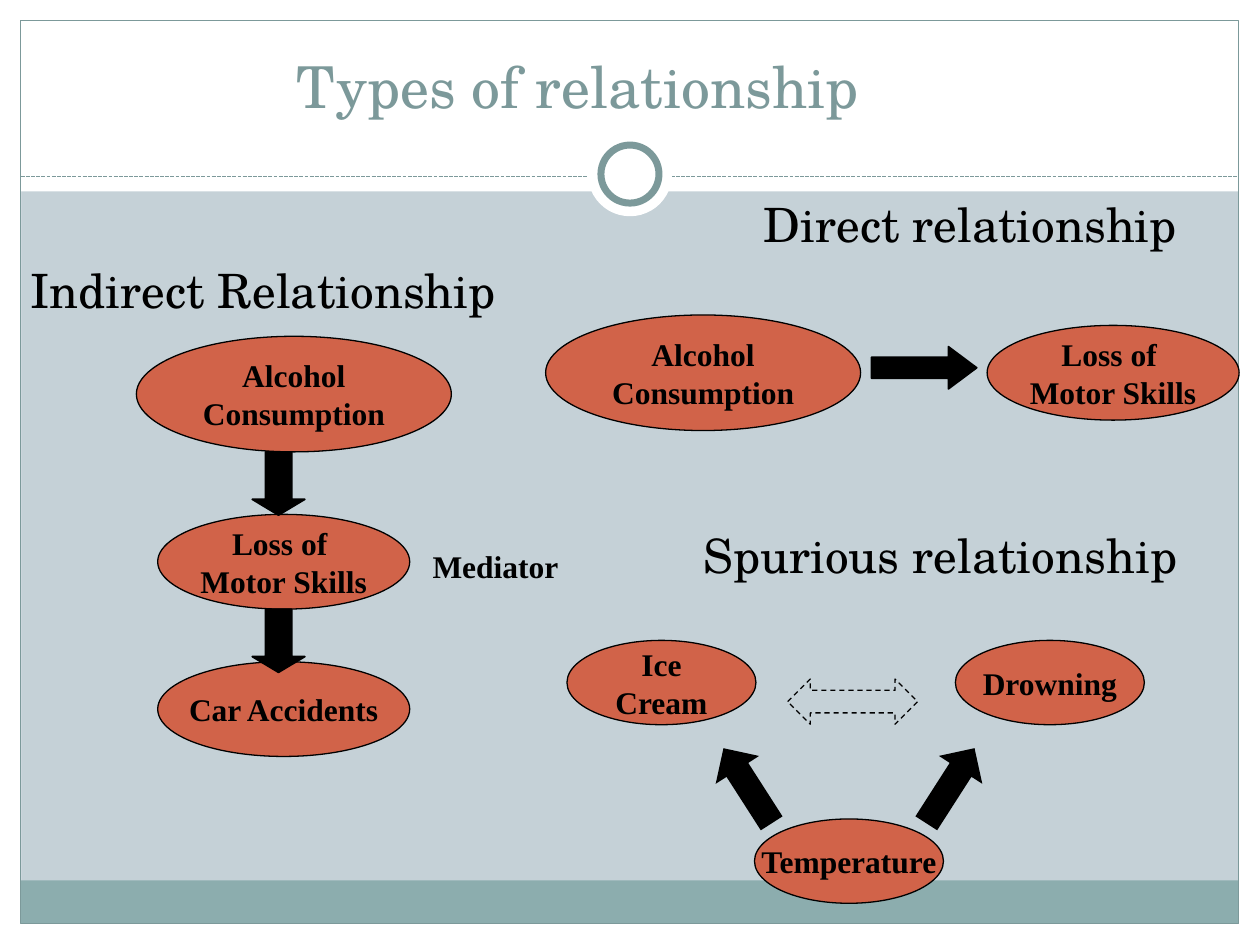
from dataclasses import dataclass

from lxml import etree
from pptx import Presentation
from pptx.dml.color import RGBColor
from pptx.enum.dml import MSO_LINE
from pptx.enum.shapes import MSO_CONNECTOR, MSO_SHAPE
from pptx.enum.text import MSO_ANCHOR, MSO_AUTO_SIZE, PP_ALIGN
from pptx.oxml.ns import qn
from pptx.util import Cm, Pt

RECTANGLE, OVAL = MSO_SHAPE.RECTANGLE, MSO_SHAPE.OVAL
RIGHT_ARROW, DOUBLE_ARROW = MSO_SHAPE.RIGHT_ARROW, MSO_SHAPE.LEFT_RIGHT_ARROW
DASH, FINE_DASH = MSO_LINE.DASH, MSO_LINE.SQUARE_DOT
LEFT, CENTER, RIGHT = PP_ALIGN.LEFT, PP_ALIGN.CENTER, PP_ALIGN.RIGHT
MIDDLE, BOTTOM = MSO_ANCHOR.MIDDLE, MSO_ANCHOR.BOTTOM
FIXED_SIZE = MSO_AUTO_SIZE.NONE


@dataclass(frozen=True)
class Theme:
    background: str = "C5D1D7"
    white: str = "FFFFFF"
    accent: str = "7C999A"
    footer: str = "8CADAE"
    node: str = "D16349"
    black: str = "000000"
    heading_font: str = "TeX Gyre Schola"
    label_font: str = "Times New Roman"
    title_size: int = 33
    heading_size: int = 27
    label_size: int = 18
    thin: float = 0.75
    ring: float = 4


class SlideBuilder:
    def __init__(self, page, theme):
        self.page, self.theme = page, theme
        page.background.fill.solid()
        page.background.fill.fore_color.rgb = RGBColor.from_string(theme.background)

    def format_text(self, para, font, size, color, bold=False, align=CENTER):
        para.alignment = align
        for span in para.runs:
            span.font.name, span.font.size, span.font.bold = font, Pt(size), bold
            span.font.color.rgb = RGBColor.from_string(color)

    def format_label(self, frame, align=CENTER):
        for para in frame.paragraphs:
            self.format_text(para, self.theme.label_font, self.theme.label_size,
                             self.theme.black, True, align)

    def shape(self, kind, left, top, width, height, fill=None, line=None,
              weight=None, dash=None):
        shape = self.page.shapes.add_shape(
            kind, Cm(left), Cm(top), Cm(width), Cm(height))
        shape.shadow.inherit = False
        if fill:
            shape.fill.solid()
            shape.fill.fore_color.rgb = RGBColor.from_string(fill)
        else:
            shape.fill.background()
        if line:
            shape.line.color.rgb = RGBColor.from_string(line)
            shape.line.width = Pt(weight or self.theme.thin)
            if dash:
                shape.line.dash_style = dash
        else:
            shape.line.fill.background()
        return shape

    def circle(self, center_x, center_y, size, **style):
        return self.shape(OVAL, center_x - size / 2, center_y - size / 2,
                          size, size, **style)

    def dashed_line(self, left, right, y):
        line = self.page.shapes.add_connector(
            MSO_CONNECTOR.STRAIGHT, Cm(left), Cm(y), Cm(right), Cm(y))
        line.line.color.rgb = RGBColor.from_string(self.theme.accent)
        line.line.width = Pt(self.theme.thin)
        line.line.dash_style = FINE_DASH
        etree.SubElement(line.element.spPr, qn("a:effectLst"))

    def node(self, text, left, top, width, height, wrap=False):
        oval = self.shape(OVAL, left, top, width, height,
                          self.theme.node, self.theme.black)
        frame = oval.text_frame
        frame.text = text
        frame.word_wrap = wrap
        frame.vertical_anchor = MIDDLE
        self.format_label(frame)
        return oval

    def arrow(self, left, top, width, height, rotation=0, head=0.5, line=None):
        """Draw a black block arrow; head is its length relative to its height."""
        arrow = self.shape(RIGHT_ARROW, left, top, width, height,
                           self.theme.black, line, 1)
        arrow.adjustments[1] = head
        arrow.rotation = rotation
        return arrow

    def caption(self, text, left, top, width, height):
        box = self.page.shapes.add_textbox(Cm(left), Cm(top), Cm(width), Cm(height))
        box.text_frame.text = text
        box.text_frame.word_wrap = True
        self.format_label(box.text_frame, LEFT)

    def group(self, *shapes):
        self.page.shapes.add_group_shape(shapes)

    def place(self, holder, left, top, width, height):
        """Move a placeholder, in front of everything drawn so far."""
        holder.left, holder.top = Cm(left), Cm(top)
        holder.width, holder.height = Cm(width), Cm(height)
        holder.element.getparent().append(holder.element)
        holder.text_frame.auto_size = FIXED_SIZE
        return holder.text_frame

    def title(self, text, *position):
        frame = self.place(self.page.shapes.title, *position)
        frame.text = text
        frame.vertical_anchor = BOTTOM
        self.format_text(frame.paragraphs[0], self.theme.heading_font,
                         self.theme.title_size, self.theme.accent)

    def headings(self, items, *position):
        """Fill the body with (text, alignment, space before) headings."""
        frame = self.place(self.page.placeholders[1], *position)
        frame.text = "\n".join(text for text, _, _ in items)
        for para, (_, align, gap) in zip(frame.paragraphs, items):
            properties = para._p.get_or_add_pPr()
            properties.set("marL", "0")
            properties.set("indent", "0")
            etree.SubElement(properties, qn("a:buNone"))
            para.space_before = Pt(gap)
            self.format_text(para, self.theme.heading_font,
                             self.theme.heading_size, self.theme.black, align=align)


def draw_backdrop(slide):
    theme = slide.theme
    for edge in ((0, 18.62, 25.4, 0.43), (0, 0, 25.4, 3.86),
                 (0, 0, 0.43, 19.05), (24.97, 0, 0.43, 19.05)):
        slide.shape(RECTANGLE, *edge, fill=theme.white)
    slide.shape(RECTANGLE, 0.42, 17.75, 24.55, 0.87, fill=theme.footer)
    slide.shape(RECTANGLE, 0.42, 0.42, 24.55, 18.2, line=theme.accent)
    slide.dashed_line(0.42, 24.97, 3.56)
    slide.circle(12.7, 3.51, 1.7, fill=theme.white)
    slide.circle(12.7, 3.51, 1.17, fill=theme.white, line=theme.accent,
                 weight=theme.ring)


def draw_relationships(slide):
    black = slide.theme.black
    alcohol, skills = "Alcohol Consumption", "Loss of \nMotor Skills"
    large, medium, small = (6.35, 2.33), (5.08, 1.91), (3.81, 1.7)

    slide.group(
        slide.node("Temperature", 15.21, 16.51, *small),
        slide.arrow(18.26, 15.32, 1.8, 1.04, rotation=302.7),
        slide.arrow(14.17, 15.32, 1.8, 1.04, rotation=237.3),
        slide.shape(DOUBLE_ARROW, 15.88, 13.69, 2.62, 0.91, line=black, dash=DASH),
        slide.node("Ice Cream", 11.43, 12.91, *small, wrap=True),
        slide.node("Drowning", 19.26, 12.91, *small))

    slide.node(alcohol, 11, 6.35, *large, wrap=True)
    slide.node(skills, 19.9, 6.56, *medium)
    slide.arrow(17.57, 6.99, 2.12, 0.85, head=0.67, line=black)

    slide.group(
        slide.node("Car Accidents", 3.18, 13.34, *medium),
        slide.node(alcohol, 2.75, 6.78, *large, wrap=True),
        slide.node(skills, 3.18, 10.37, *medium),
        *(slide.arrow(4.98, top, 1.27, 1.06, rotation=90, head=0.3, line=black)
          for top in (9.22, 12.39)))
    slide.caption("Mediator", 8.47, 10.9, 3.39, 1.02)


def main():
    deck = Presentation()
    deck.slide_width, deck.slide_height = Cm(25.4), Cm(19.05)
    slide = SlideBuilder(deck.slides.add_slide(deck.slide_layouts[1]), Theme())
    draw_backdrop(slide)
    slide.title("Types of relationship", 1.27, 0.76, 20.75, 1.78)
    slide.headings([("Direct relationship", RIGHT, 0),
                    ("Indirect Relationship", LEFT, 5.4),
                    ("Spurious relationship", RIGHT, 119)],
                   0.36, 3.81, 23.62, 12.7)
    draw_relationships(slide)
    deck.save("out.pptx")


if __name__ == "__main__":
    main()
